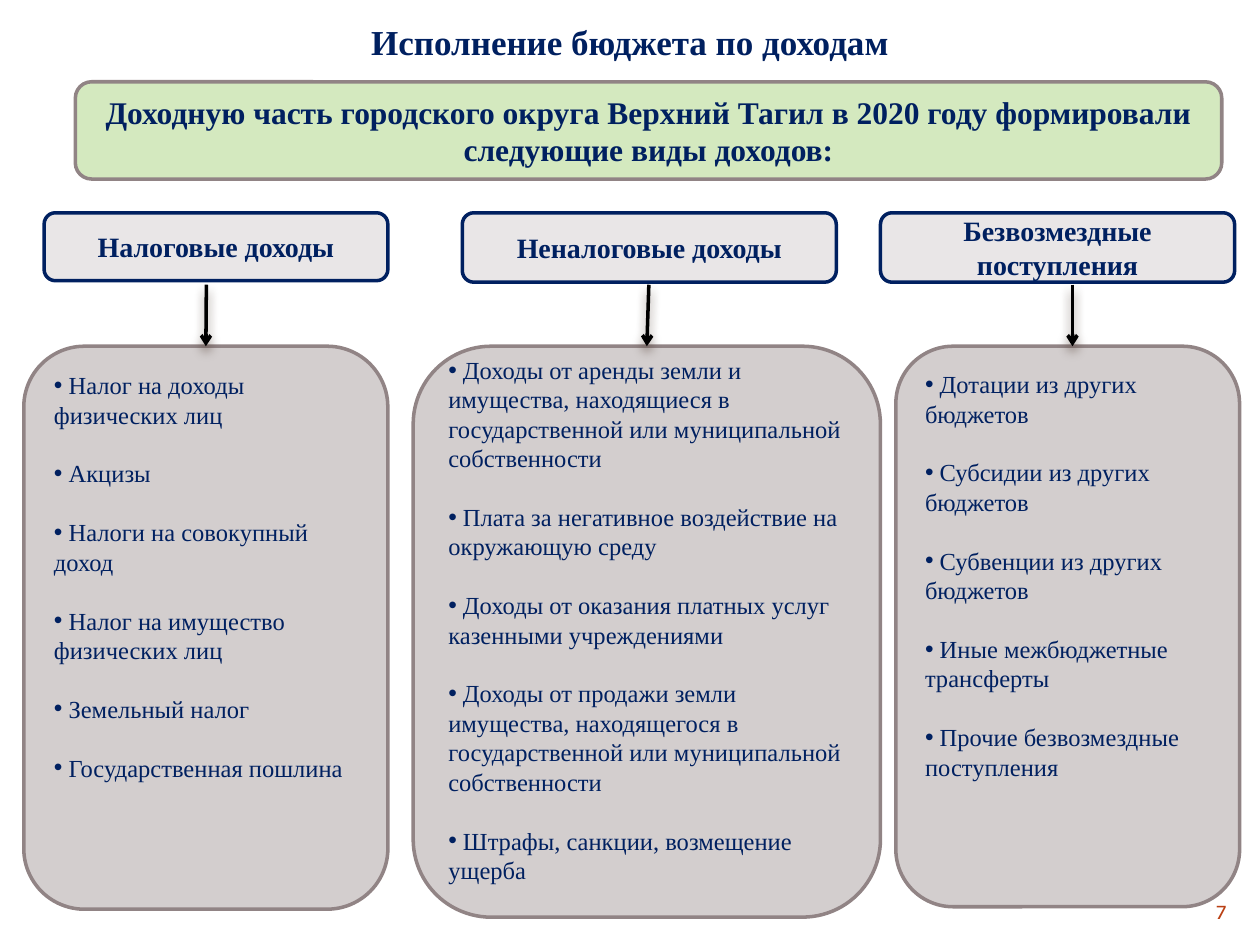
import pptx
import pptx.util
import pptx.dml.color
import pptx.enum.shapes
import pptx.enum.text
import pptx.oxml
import pptx.oxml.ns

Cm = pptx.util.Cm
Pt = pptx.util.Pt
SHAPES = pptx.enum.shapes.MSO_SHAPE
ALIGN = pptx.enum.text.PP_ALIGN
ANCHOR = pptx.enum.text.MSO_ANCHOR

COLORS = {
    "navy": "002060", "green": "C2E1A5", "pale": "E9E6E7", "grey": "D3CECE",
    "taupe": "918485", "black": "000000", "shade": "4E3B30", "rust": "BA4014",
}
SERIF = "Times New Roman"
HEADING_TOP, ARROW_TOP, PANEL_TOP = 4.29, 5.74, 6.98
ITEM_GAP = 16.8

TITLE = "Исполнение бюджета по доходам"
BANNER = "Доходную часть городского округа Верхний Тагил в 2020 году формировали следующие виды доходов:"
PAGE = "7"
INCOME_TYPES = [
    {
        "heading": "Налоговые доходы",
        "heading_box": (0.89, 6.93, 1.37), "panel_box": (0.48, 7.34, 11.35),
        "arrow_x": 4.16, "anchor": ANCHOR.TOP, "bottom_inset": 0.13,
        "items": ["Налог на доходы\nфизических лиц", "Акцизы", "Налоги на совокупный доход",
                  "Налог на имущество физических лиц", "Земельный налог",
                  "Государственная пошлина"],
    },
    {
        "heading": "Неналоговые доходы",
        "heading_box": (9.32, 7.54, 1.4), "panel_box": (8.33, 9.42, 11.51),
        "arrow_x": 13.08, "anchor": ANCHOR.MIDDLE, "bottom_inset": 0.61,
        "items": ["Доходы от аренды земли и имущества, находящиеся в государственной или муниципальной собственности",
                  "Плата за негативное воздействие на окружающую среду",
                  "Доходы от оказания платных услуг казенными учреждениями",
                  "Доходы от продажи земли имущества, находящегося в государственной или муниципальной собственности",
                  "Штрафы, санкции, возмещение ущерба"],
    },
    {
        "heading": "Безвозмездные поступления",
        "heading_box": (17.75, 7.14, 1.4), "panel_box": (18.06, 6.93, 11.3),
        "arrow_x": 21.62, "anchor": ANCHOR.TOP, "bottom_inset": 0.13,
        "items": ["Дотации из других бюджетов", "Субсидии из других бюджетов",
                  "Субвенции из других бюджетов", "Иные межбюджетные трансферты",
                  "Прочие безвозмездные поступления"],
    },
]


def rgb(name):
    return pptx.dml.color.RGBColor.from_string(COLORS[name])


def xml(markup):
    return pptx.oxml.parse_xml(markup.replace(">", f" {pptx.oxml.ns.nsdecls('a')}>", 1))


def write(paragraph, text, size, align=ALIGN.CENTER, bold=False, font=SERIF, color="navy"):
    paragraph.alignment = align
    for number, line in enumerate(text.split("\n")):
        if number:
            paragraph.add_line_break()
        run = paragraph.add_run()
        run.text = line
        run.font.name = font
        run.font.size = Pt(size)
        run.font.bold = bold
        run.font.color.rgb = rgb(color)


def add_label(slide, box, text, size, **style):
    label = slide.shapes.add_textbox(*map(Cm, box))
    label.text_frame.word_wrap = True
    write(label.text_frame.paragraphs[0], text, size, **style)
    return label.text_frame


def add_card(slide, box, fill, outline):
    card = slide.shapes.add_shape(SHAPES.ROUNDED_RECTANGLE, *map(Cm, box))
    card.shadow.inherit = False
    card.fill.solid()
    card.fill.fore_color.rgb = rgb(fill)
    card.line.color.rgb = rgb(outline)
    card.line.width = Pt(2)
    card.text_frame.word_wrap = True
    card.text_frame.vertical_anchor = ANCHOR.MIDDLE
    return card


def add_panel(slide, income):
    left, width, height = income["panel_box"]
    panel = add_card(slide, (left, PANEL_TOP, width, height), "grey", "taupe")
    frame = panel.text_frame
    frame.vertical_anchor = income["anchor"]
    frame.margin_bottom = Cm(income["bottom_inset"])
    for number, item in enumerate(income["items"]):
        paragraph = frame.add_paragraph() if number else frame.paragraphs[0]
        if number:
            paragraph.space_before = Pt(ITEM_GAP)
        properties = paragraph._p.get_or_add_pPr()
        properties.append(xml('<a:buFont typeface="Arial"/>'.replace("/>", "></a:buFont>")))
        properties.append(xml('<a:buChar char="•"></a:buChar>'))
        write(paragraph, " " + item, 14, align=ALIGN.LEFT)
    return panel


def add_arrow(slide, x, panel):
    arrow = slide.shapes.add_connector(
        pptx.enum.shapes.MSO_CONNECTOR.STRAIGHT, Cm(x), Cm(ARROW_TOP), Cm(x), Cm(PANEL_TOP))
    if abs(panel.left + panel.width // 2 - Cm(x)) < Cm(0.05):
        arrow.end_connect(panel, 0)
    arrow.line.color.rgb = rgb("black")
    arrow.line.width = Pt(2)
    arrow.line._get_or_add_ln().append(xml('<a:tailEnd type="arrow"></a:tailEnd>'))
    arrow._element.spPr.append(xml(
        f'<a:effectLst><a:outerShdw blurRad="{Pt(6)}" dist="{Pt(4)}" dir="5400000" rotWithShape="0">'
        f'<a:srgbClr val="{COLORS["shade"]}"><a:alpha val="60000"/></a:srgbClr>'
        '</a:outerShdw></a:effectLst>'))


def main():
    deck = pptx.Presentation()
    deck.slide_width, deck.slide_height = Cm(25.4), Cm(19.05)
    slide = deck.slides.add_slide(deck.slide_layouts[6])

    page = add_label(slide, (22.86, 17.98, 2.11, 0.69), PAGE, 12,
                     align=ALIGN.RIGHT, font="Karla", color="rust")
    page.vertical_anchor = ANCHOR.TOP
    title = add_label(slide, (0, 0, 25.4, 1.65), TITLE, 20, bold=True)
    title.margin_left = title.margin_right = Cm(0.41)
    title.margin_top = title.margin_bottom = Cm(0.41)

    banner = add_card(slide, (1.52, 1.65, 23.11, 1.96), "green", "taupe")
    banner_color = banner._element.spPr.find(".//" + pptx.oxml.ns.qn("a:srgbClr"))
    banner_color.append(xml('<a:alpha val="70000"></a:alpha>'))
    write(banner.text_frame.paragraphs[0], BANNER, 18, bold=True)

    for income in INCOME_TYPES:
        left, width, height = income["heading_box"]
        heading = add_card(slide, (left, HEADING_TOP, width, height), "pale", "navy")
        write(heading.text_frame.paragraphs[0], income["heading"], 16, bold=True)
        panel = add_panel(slide, income)
        add_arrow(slide, income["arrow_x"], panel)

    deck.save("out.pptx")


if __name__ == "__main__":
    main()
